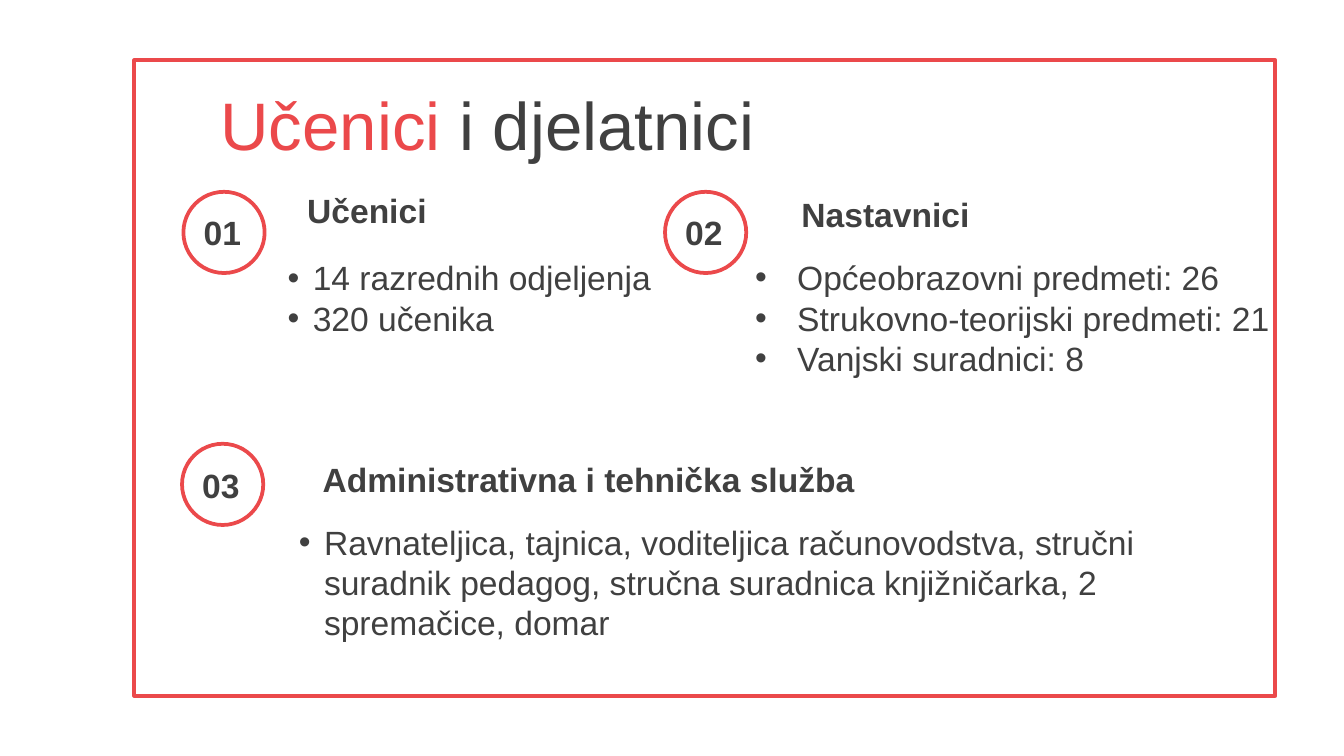
from lxml.etree import SubElement
from pptx import Presentation
from pptx.dml.color import RGBColor
from pptx.enum.shapes import MSO_SHAPE as Shape
from pptx.enum.text import MSO_ANCHOR as Anchor, MSO_AUTO_SIZE as AutoSize
from pptx.oxml.ns import qn
from pptx.util import Emu, Pt

RED = RGBColor(0xEB, 0x49, 0x4B)
GREY = RGBColor(0x40, 0x40, 0x40)
WHITE = RGBColor(0xFF, 0xFF, 0xFF)
FONT = "Arial"
PX = 9525  # 96 px to the inch
BADGE = 58


def px(*lengths):
    return [Emu(length * PX) for length in lengths]


def add_outline(slide, kind, box, fill=None):
    outline = slide.shapes.add_shape(kind, *px(*box))
    outline.shadow.inherit = False
    if fill is None:
        outline.fill.background()
    else:
        outline.fill.solid()
        outline.fill.fore_color.rgb = fill
    outline.line.color.rgb = RED
    outline.line.width = Pt(2)


def add_run(paragraph, text, size=18, color=GREY, bold=False):
    run = paragraph.add_run()
    run.text = text
    run.font.name = FONT
    run.font.size = Pt(size)
    run.font.color.rgb = color
    run.font.bold = bold


def add_frame(slide, box, wrap=True, fit=AutoSize.SHAPE_TO_FIT_TEXT):
    frame = slide.shapes.add_textbox(*px(*box)).text_frame
    frame.word_wrap = wrap
    frame.auto_size = fit
    return frame


def set_bullet(paragraph, indent):
    properties = paragraph._p.get_or_add_pPr()
    properties.set("marL", str(indent * PX))
    properties.set("indent", str(-indent * PX))
    SubElement(properties, qn("a:buFont"), typeface=FONT)
    SubElement(properties, qn("a:buChar"), char="•")


def add_title(slide, box):
    title = add_frame(slide, box, fit=AutoSize.NONE)
    title.vertical_anchor = Anchor.MIDDLE
    add_run(title.paragraphs[0], "Učenici ", 36, RED)
    add_run(title.paragraphs[0], "i djelatnici", 36)


def add_section(slide, left, top, number, heading, heading_box, items, items_box, indent):
    """Numbered badge, heading and list; both boxes are relative to the badge."""
    def place(box):
        dx, dy, width, height = box
        return left + dx, top + dy, width, height

    # Badge
    add_outline(slide, Shape.OVAL, (left, top, BADGE, BADGE), WHITE)
    badge_number = add_frame(slide, place((5, 10, 46, 38)), wrap=False)
    add_run(badge_number.paragraphs[0], number, bold=True)

    # Heading
    heading_frame = add_frame(slide, place(heading_box))
    add_run(heading_frame.paragraphs[0], heading, bold=True)

    # List
    list_frame = add_frame(slide, place(items_box))
    for index, item in enumerate(items):
        paragraph = list_frame.add_paragraph() if index else list_frame.paragraphs[0]
        set_bullet(paragraph, indent)
        add_run(paragraph, item)


def main():
    deck = Presentation()
    deck.slide_width, deck.slide_height = px(960, 540)
    slide = deck.slides.add_slide(deck.slide_layouts[6])

    # Frame and title
    add_outline(slide, Shape.RECTANGLE, (96, 43, 815, 454))
    add_title(slide, (148, 58, 749, 60))

    # Students, teachers, staff
    add_section(slide, 131, 137, "01",
                "Učenici", (79, -6, 293, 38),
                ["14 razrednih odjeljenja", "320 učenika"],
                (65, 42, 293, 68), 18)
    add_section(slide, 475, 137, "02",
                "Nastavnici", (88, -3, 369, 38),
                ["Općeobrazovni predmeti: 26",
                 "Strukovno-teorijski predmeti: 21",
                 "Vanjski suradnici: 8"],
                (55, 42, 388, 97), 30)
    add_section(slide, 130, 317, "03",
                "Administrativna i tehnička služba", (91, 6, 675, 38),
                ["Ravnateljica, tajnica, voditeljica računovodstva, stručni "
                 "suradnik pedagog, stručna suradnica knjižničarka, 2 "
                 "spremačice, domar"],
                (74, 51, 675, 97), 18)

    deck.save("out.pptx")


if __name__ == "__main__":
    main()
